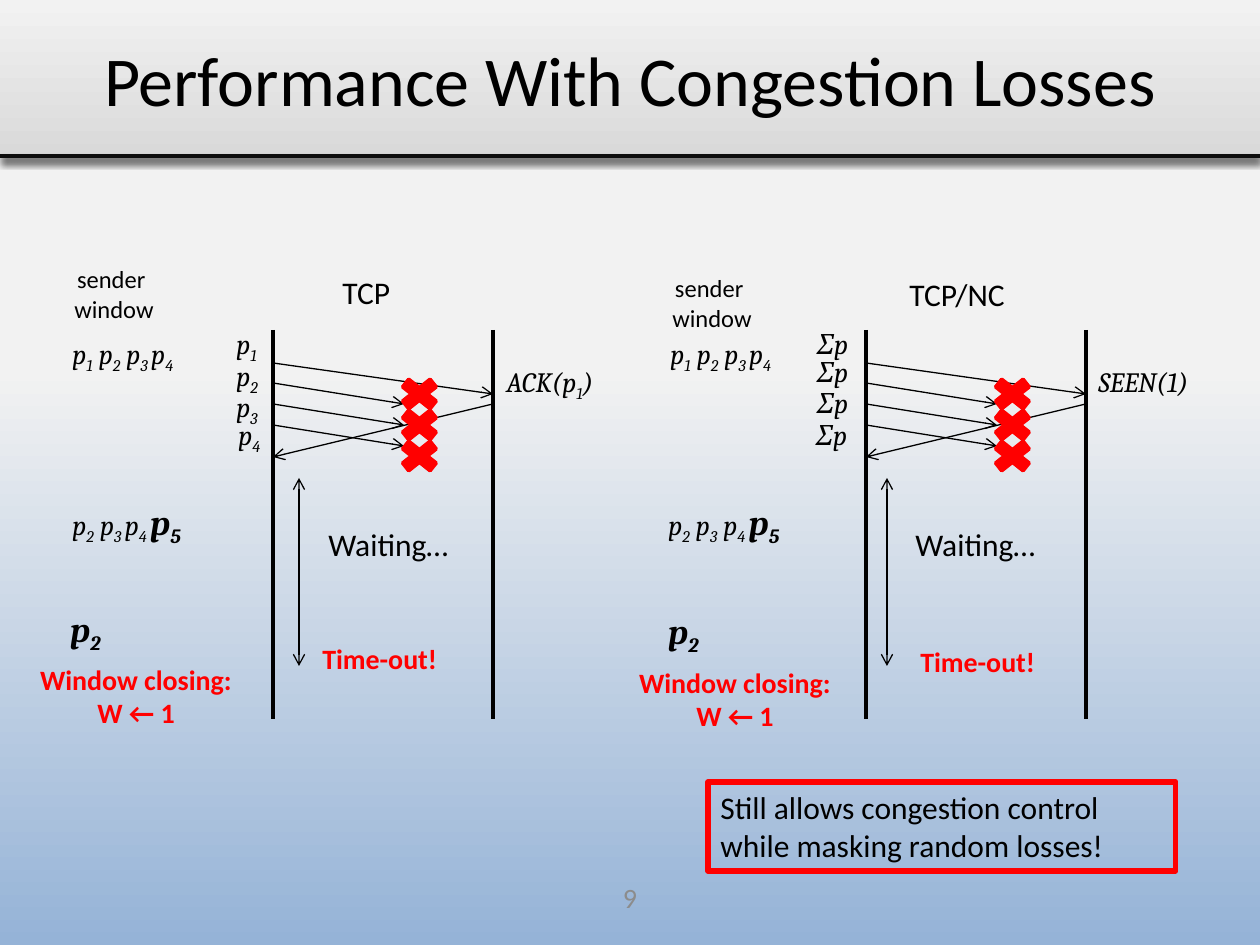
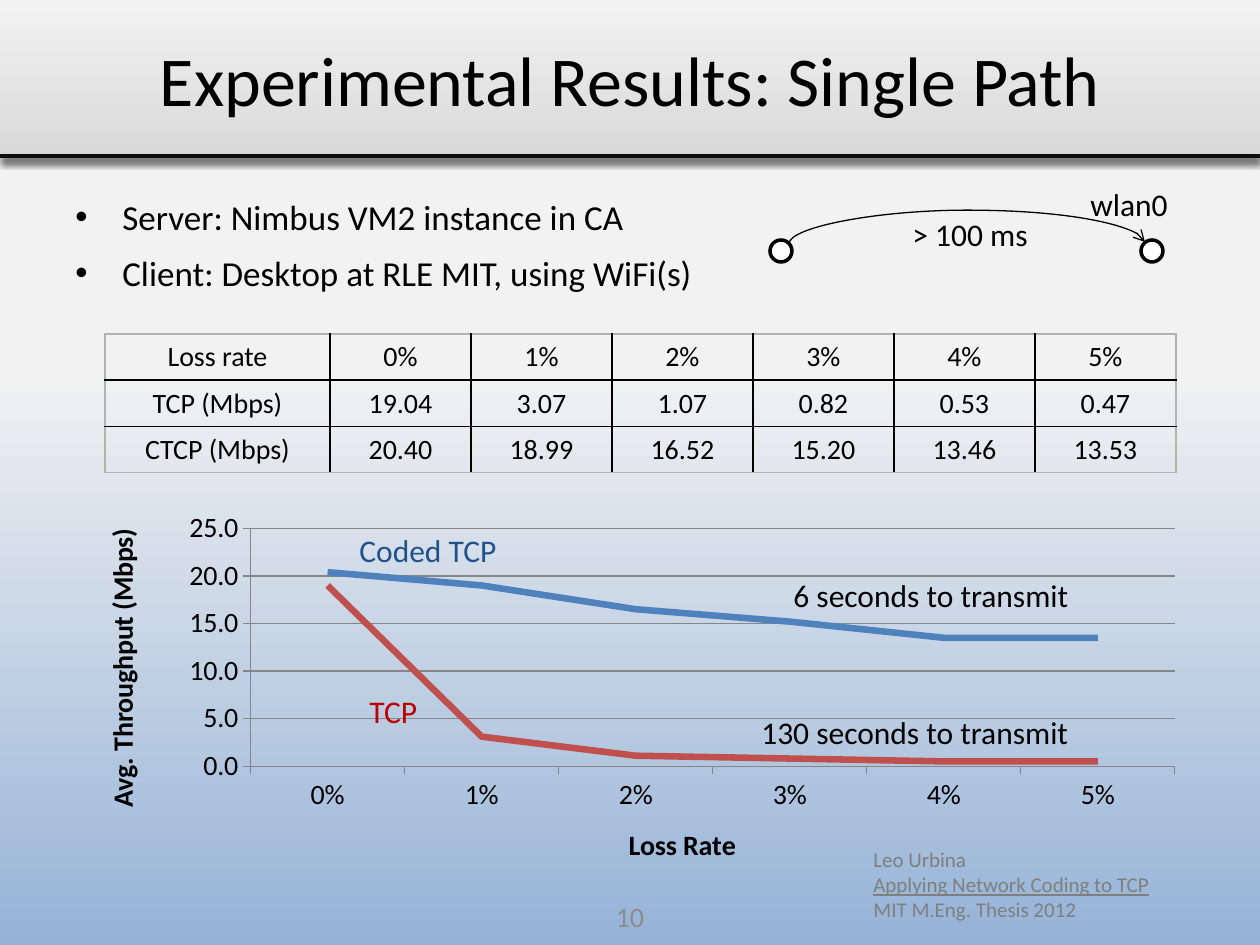
from lxml import etree
from pptx import Presentation
from pptx import util as u
from pptx.chart.data import CategoryChartData
from pptx.dml.color import RGBColor
from pptx.enum import chart as ch, shapes, text
from pptx.oxml import parse_xml
from pptx.oxml.ns import nsdecls, qn

PX = 7257  # EMU per px, 126 px to the inch
rgb = RGBColor.from_string
BLACK, RED, GREY = "000000", "FF0000", "8C8C8C"
CENTER, MIDDLE = text.PP_ALIGN.CENTER, text.MSO_ANCHOR.MIDDLE
SHADOW = (f'<a:outerShdw {nsdecls("a")} blurRad="50800" dist="38100" dir="5400000" rotWithShape="0">'
          '<a:srgbClr val="000000"><a:alpha val="40000"/></a:srgbClr></a:outerShdw>')


def write(frame, paragraphs, size=18, color=BLACK, align=None, anchor=text.MSO_ANCHOR.TOP, wrap=False, **style):
    """Fill a frame: newline breaks a line, |x| is a subscript, * starts a large bold part."""
    frame.word_wrap, frame.vertical_anchor = wrap, anchor
    for n, content in enumerate(paragraphs):
        para = frame.paragraphs[0] if n == 0 else frame.add_paragraph()
        para.alignment = align
        for row, line in enumerate(content.split("\n")):
            if row:
                para.add_line_break()
            for big, part in enumerate(line.split("*")):
                for sub, piece in enumerate(part.split("|")):
                    if not piece:
                        continue
                    run = para.add_run()
                    run.text = piece
                    looks = {"name": "Calibri", "size": u.Pt(20 if big else size), **style}
                    if big:
                        looks["bold"] = True
                    for key, value in looks.items():
                        setattr(run.font, key, value)
                    run.font.color.rgb = rgb(color)
                    if sub % 2:
                        run._r.get_or_add_rPr().set("baseline", "-25000")


def link(slide, ends, width=0.75, color=BLACK, heads=(), kind=shapes.MSO_CONNECTOR.STRAIGHT):
    """Draw a line; heads lists headEnd and/or tailEnd."""
    line = slide.shapes.add_connector(kind, *[v * PX for v in ends])
    line.line.color.rgb = rgb(color)
    line.line.width = u.Pt(width)
    for head in heads:
        etree.SubElement(line.line._get_or_add_ln(), qn("a:" + head), type="arrow")
    etree.SubElement(line._element.spPr, qn("a:effectLst"))
    return line


prs = Presentation()
prs.slide_width, prs.slide_height = 1260 * PX, 945 * PX

# Shared background, title band and page number
pages = []
for title, number, number_top in (("Performance With Congestion Losses", "9", 872),
                                  ("Experimental Results: Single Path", "10", 891)):
    slide = prs.slides.add_slide(prs.slide_layouts[6])
    pages.append(slide)
    for height, low, high, stop in ((945, "95B3D7", "F2F2F2", 0.61), (157, "D9D9D9", "F2F2F2", 1)):
        band = slide.shapes.add_shape(shapes.MSO_SHAPE.RECTANGLE, 0, 0, 1260 * PX, height * PX)
        band.line.fill.background()
        band.shadow.inherit = False
        band.fill.gradient()
        band.fill.gradient_angle = 90
        for point, color, position in zip(band.fill.gradient_stops, (low, high), (0, stop)):
            point.color.rgb, point.position = rgb(color), position
    rule = link(slide, (0, 156, 1260, 156), 2, "0D0D0D")
    for part in (band, rule):
        part._element.spPr.find(qn("a:effectLst")).append(parse_xml(SHADOW))
    for box, words, size, color in (((0, 0, 1260, 157), title, 40, BLACK),
                                    ((483, number_top, 294, 50), number, 16, GREY)):
        frame = slide.shapes.add_textbox(*[v * PX for v in box]).text_frame
        write(frame, [words], size, color, CENTER, MIDDLE, True)
losses, results = pages

# Congestion losses: the two time diagrams
for sender in (273, 866):
    receiver = sender + 220
    for x in (sender, receiver):
        link(losses, (x, 330, x, 719), 2.25)
    link(losses, (sender, 363, receiver, 394), heads=["tailEnd"])
    link(losses, (receiver, 404, sender, 457), heads=["tailEnd"])
    for n in range(3):
        top = 383 + 21 * n
        link(losses, (sender, top, sender + 131, top + 21), heads=["tailEnd"])
    for n in range(3):
        box = (sender + 120, 373 + 31 * n, 53, 42)
        lost = losses.shapes.add_shape(shapes.MSO_SHAPE.MATH_MULTIPLY, *[v * PX for v in box])
        lost.shadow.inherit = False
        lost.fill.solid()
        lost.fill.fore_color.rgb = lost.line.color.rgb = rgb(RED)
        lost.line.width = u.Pt(2)
for x in (299, 887):
    link(losses, (x, 478, x, 666), heads=["headEnd", "tailEnd"])

# Labels: words, height, then left, top and width in the TCP and in the TCP/NC diagram
plain = {}
caption = {"size": 14, "align": CENTER}
packet = {"size": 16, "name": "Cambria", "italic": True}
alarm = {"size": 16, "color": RED, "bold": True, "wrap": True}
labels = [
    (("TCP", "TCP/NC"), 50, (330, 267, 90), (897, 269, 150), plain),
    (("sender \nwindow",) * 2, 72, (60, 258, 108), (658, 267, 108), caption),
    (("p|1| p|2| p|3 |p|4",) * 2, 47, (60, 330, 139), (658, 330, 139), packet),
    (("p|2| p|3 |p|4 *p|5", "p|2| p|3| p|4 *p|5"), 55, (60, 494, 145), (656, 494, 145), packet),
    (("*p|2",) * 2, 55, (58, 601, 64), (656, 603, 64), packet),
    (("p|1", "Σp"), 47, (224, 320, 53), (805, 320, 64), packet),
    (("p|2", "Σp"), 47, (224, 352, 53), (805, 348, 64), packet),
    (("p|3", "Σp"), 47, (224, 383, 53), (805, 379, 64), packet),
    (("p|4", "Σp"), 47, (226, 411, 53), (804, 411, 64), packet),
    (("ACK(p|1|)", "SEEN(1)"), 47, (494, 358, 124), (1086, 358, 130), packet),
    (("Waiting…",) * 2, 50, (316, 519, 163), (903, 519, 163), plain),
    (("Time-out!",) * 2, 47, (310, 635, 242), (908, 638, 242), alarm),
    (("Window closing:\nW ← 1",) * 2, 81, (5, 656, 262), (604, 659, 262), {**alarm, "align": CENTER}),
]
for words, height, *places, style in labels:
    for word, place in zip(words, places):
        frame = losses.shapes.add_textbox(*[v * PX for v in (*place, height)]).text_frame
        write(frame, [word], **style)

# Conclusion in a red frame
conclusion = losses.shapes.add_shape(shapes.MSO_SHAPE.RECTANGLE, *[v * PX for v in (708, 782, 468, 89)])
conclusion.shadow.inherit = False
conclusion.fill.background()
conclusion.line.color.rgb = rgb(RED)
conclusion.line.width = u.Pt(3)
write(conclusion.text_frame, ["Still allows congestion control while masking random losses!"],
      align=text.PP_ALIGN.LEFT, wrap=True)

# Experimental results: the set-up as bullets
setup = results.shapes.add_textbox(*[v * PX for v in (63, 189, 1134, 144)]).text_frame
write(setup, ["Server: Nimbus VM2 instance in CA", "Client: Desktop at RLE MIT, using WiFi(s)"], 20, wrap=True)
for para in setup.paragraphs:
    props = para._p.get_or_add_pPr()
    props.set("marL", str(47 * PX))
    props.set("indent", str(-47 * PX))
    etree.SubElement(props, qn("a:buFont"), typeface="Arial")
    etree.SubElement(props, qn("a:buChar"), char="•")
setup.paragraphs[1].space_before = u.Pt(8)

# Path from server to client
for x in (770, 1141):
    host = results.shapes.add_shape(shapes.MSO_SHAPE.OVAL, *[v * PX for v in (x, 240, 22, 22)])
    host.shadow.inherit = False
    host.fill.solid()
    host.fill.fore_color.rgb = rgb("FFFFFF")
    host.line.color.rgb = rgb(BLACK)
    host.line.width = u.Pt(2)
route = link(results, (968, 421, 966, 65), heads=["tailEnd"], kind=shapes.MSO_CONNECTOR.CURVE)
route.rotation = 90
bend = route._element.spPr.find(qn("a:prstGeom"))
for guides in bend.findall(qn("a:avLst")):
    bend.remove(guides)
etree.SubElement(etree.SubElement(bend, qn("a:avLst")), qn("a:gd"), name="adj1", fmla="val 1700000")

# Throughput table, with a lighter outer border
rates = [0, 0.01, 0.02, 0.03, 0.04, 0.05]
tcp = [19.04, 3.07, 1.07, 0.82, 0.53, 0.47]
coded = [20.40, 18.99, 16.52, 15.20, 13.46, 13.53]
rows = [["Loss rate"] + [f"{v:.0%}" for v in rates],
        ["TCP (Mbps)"] + [f"{v:.2f}" for v in tcp],
        ["CTCP (Mbps)"] + [f"{v:.2f}" for v in coded]]
table = results.shapes.add_table(3, 7, *[v * PX for v in (105, 334, 1071, 138)]).table
table.first_row = table.horz_banding = False
for n, column in enumerate(table.columns):
    column.width = (141 if n else 225) * PX
for r, row in enumerate(rows):
    table.rows[r].height = 46 * PX
    for c, value in enumerate(row):
        cell = table.cell(r, c)
        write(cell.text_frame, [value], 16, align=CENTER, wrap=True)
        cell.vertical_anchor = MIDDLE
        cell.fill.background()
        for n, (side, outer) in enumerate(zip("LRTB", (c == 0, c == 6, r == 0, r == 2))):
            color = "B2B2B2" if outer else BLACK
            cell._tc.get_or_add_tcPr().insert(n, parse_xml(
                f'<a:ln{side} {nsdecls("a")} w="12700"><a:solidFill><a:srgbClr val="{color}"/></a:solidFill></a:ln{side}>'))

# Throughput chart
data = CategoryChartData(number_format="0.0")
data.categories = rates
data.categories.number_format = "0%"
data.add_series("Series 1", [round(v, 1) for v in coded])
data.add_series("Series 2", [round(v, 1) for v in tcp])
chart = results.shapes.add_chart(ch.XL_CHART_TYPE.LINE, *[v * PX for v in (94, 504, 1103, 388)], data).chart
chart.has_legend = chart.has_title = False
chart.font.name, chart.font.size = "Calibri", u.Pt(16)
chart.font.color.rgb = rgb(BLACK)
chart.plots[0].vary_by_categories = False
for series, color in zip(chart.plots[0].series, ("4F81BD", "C0504D")):
    series.smooth = False
    series.marker.style = ch.XL_MARKER_STYLE.NONE
    series.format.line.color.rgb = rgb(color)
    series.format.line.width = u.Pt(3.75)
layouts = [(chart._chartSpace.chart.plotArea, 0, {"x": 0.142, "y": 0.063, "w": 0.838, "h": 0.613})]
for axis, name, number_format, place in (
        (chart.category_axis, "Loss Rate", "0%", {"x": 0.48, "y": 0.817}),
        (chart.value_axis, "Avg. Throughput (Mbps)", "0.0", {"x": 0.004, "y": 0.05})):
    write(axis.axis_title.text_frame, [name], 16, bold=True)
    axis.tick_labels.number_format = number_format
    axis.tick_labels.number_format_is_linked = False
    axis.major_tick_mark = ch.XL_TICK_MARK.OUTSIDE
    axis.format.line.color.rgb = rgb("868686")
    layouts.append((axis.axis_title._element, 1, place))
chart.value_axis.minimum_scale, chart.value_axis.maximum_scale, chart.value_axis.major_unit = 0, 25, 5
chart.value_axis.major_gridlines.format.line.color.rgb = rgb("868686")
for element, index, place in layouts:
    for layout in element.findall(qn("c:layout")):
        element.remove(layout)
    layout = etree.Element(qn("c:layout"))
    element.insert(index, layout)
    manual = etree.SubElement(layout, qn("c:manualLayout"))
    if "w" in place:
        etree.SubElement(manual, qn("c:layoutTarget"), val="inner")
    for key in "xy":
        etree.SubElement(manual, qn(f"c:{key}Mode"), val="edge")
    for key, value in place.items():
        etree.SubElement(manual, qn("c:" + key), val=str(value))

# Notes on the path and on the curves
for words, box, color in (("wlan0", (1078, 179, 110, 50), BLACK),
                          ("> 100 ms", (900, 209, 158, 50), BLACK),
                          ("Coded TCP", (347, 525, 168, 50), "1F528B"),
                          ("TCP", (357, 686, 76, 50), "BD0000"),
                          ("130 seconds to transmit", (749, 707, 344, 50), BLACK),
                          ("6 seconds to transmit", (781, 570, 311, 50), BLACK)):
    write(results.shapes.add_textbox(*[v * PX for v in box]).text_frame, [words], color=color)

# Citation
thesis = results.shapes.add_textbox(*[v * PX for v in (861, 840, 399, 89)]).text_frame
write(thesis, ["Leo Urbina", "Applying Network Coding to TCP", "MIT M.Eng. Thesis 2012"], 12, "7F7F7F", wrap=True)
thesis.paragraphs[1].runs[0].font.underline = True

prs.save("out.pptx")
